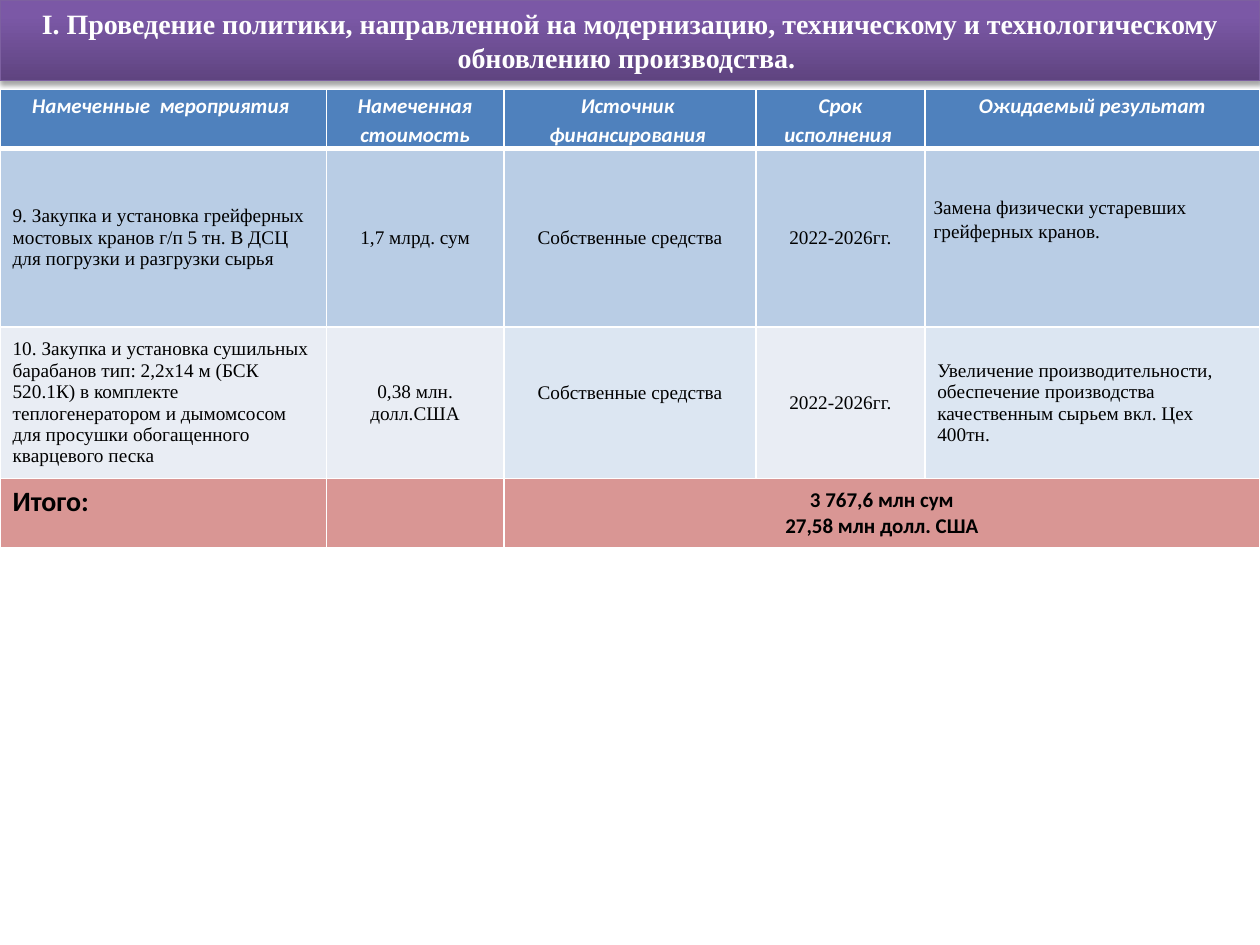
from copy import deepcopy
from dataclasses import dataclass

from lxml import etree
from pptx import Presentation
from pptx.dml.color import RGBColor
from pptx.enum.text import MSO_ANCHOR, MSO_AUTO_SIZE, PP_ALIGN
from pptx.oxml import parse_xml
from pptx.oxml.ns import nsdecls, qn
from pptx.util import Inches, Pt

LEFT, CENTER = PP_ALIGN.LEFT, PP_ALIGN.CENTER
TOP, MIDDLE = MSO_ANCHOR.TOP, MSO_ANCHOR.MIDDLE
FIXED_SIZE = MSO_AUTO_SIZE.NONE


@dataclass(frozen=True)
class Theme:
    serif: str = "Times New Roman"
    sans: str = "Calibri"
    white: str = "FFFFFF"
    black: str = "000000"
    banner_stops: tuple = ((0, "5F4480"), (0.8, "7B58A6"), (1, "7C57A8"))
    banner_line: str = "7D60A0"
    header: str = "4F81BD"
    first_row: str = "B9CDE5"
    second_row: str = "E9EDF4"
    second_row_accent: str = "DCE6F2"
    total: str = "D99694"
    large: int = 16
    medium: int = 12
    small: int = 11


theme = Theme()


def write(frame, lines, font, size, color, align=LEFT, bold=False, italic=False, spacing=1.0):
    for index, line in enumerate(lines):
        paragraph = frame.paragraphs[0] if index == 0 else frame.add_paragraph()
        paragraph.alignment = align
        paragraph.line_spacing = spacing
        run = paragraph.add_run()
        run.text = line
        run.font.name = font
        run.font.size = Pt(size)
        run.font.bold = bold
        run.font.italic = italic
        run.font.color.rgb = RGBColor.from_string(color)


def paint_cell(cell, fill, bottom_width=1):
    """Fill a cell and rule it in white on all four sides."""
    properties = cell._tc.get_or_add_tcPr()
    for side in ("lnL", "lnR", "lnT", "lnB"):
        width = bottom_width if side == "lnB" else 1
        line = etree.SubElement(properties, qn(f"a:{side}"), w=str(Pt(width)))
        solid = etree.SubElement(line, qn("a:solidFill"))
        etree.SubElement(solid, qn("a:srgbClr"), val=theme.white)
    cell.fill.solid()
    cell.fill.fore_color.rgb = RGBColor.from_string(fill)


prs = Presentation()
prs.slide_width, prs.slide_height = Inches(10), Inches(7.5)
slide = prs.slides.add_slide(prs.slide_layouts[5])

# Banner with the section heading
banner = slide.shapes.title
banner.left, banner.top = Inches(0), Inches(0)
banner.width, banner.height = Inches(10), Inches(0.64)
banner.fill.gradient()
banner.fill.gradient_angle = 90
stop_list = banner._element.spPr.find(".//" + qn("a:gsLst"))
stop_list.append(deepcopy(stop_list[-1]))
for stop, (position, color) in zip(banner.fill.gradient_stops, theme.banner_stops):
    stop.position = position
    stop.color.rgb = RGBColor.from_string(color)
banner.line.color.rgb = RGBColor.from_string(theme.banner_line)
banner.line.width = Pt(0.75)
banner._element.spPr.append(parse_xml(
    f'<a:effectLst {nsdecls("a")}><a:outerShdw blurRad="{Pt(3.1)}" dist="{Pt(1.8)}" '
    f'dir="5400000" rotWithShape="0"><a:srgbClr val="{theme.black}">'
    '<a:alpha val="35000"/></a:srgbClr></a:outerShdw></a:effectLst>'))
heading = banner.text_frame
heading.word_wrap = True
heading.auto_size = FIXED_SIZE
heading.vertical_anchor = MIDDLE
heading.margin_top = heading.margin_bottom = 0
write(heading, ["I. Проведение политики, направленной на модернизацию, техническому и "
                "технологическому обновлению производства. "],
      theme.serif, theme.large, theme.white, CENTER, bold=True)

# Table of measures
column_widths = (2.59, 1.41, 2, 1.34, 2.66)
row_heights = (0.46, 1.42, 1.2, 0.55)
plan = slide.shapes.add_table(len(row_heights), len(column_widths), Inches(0), Inches(0.71),
                              Inches(sum(column_widths)), Inches(sum(row_heights))).table
plan.horz_banding = False
for column, width in zip(plan.columns, column_widths):
    column.width = Inches(width)
for row, height in zip(plan.rows, row_heights):
    row.height = Inches(height)

headers = (
    ["Намеченные  мероприятия "],
    ["Намеченная", "стоимость"],
    ["Источник  финансирования "],
    ["Срок исполнения "],
    ["Ожидаемый результат"],
)
for column, lines in enumerate(headers):
    cell = plan.cell(0, column)
    paint_cell(cell, theme.header, bottom_width=3)
    cell.margin_left = cell.margin_right = Inches(0.07)
    cell.margin_top = cell.margin_bottom = 0
    write(cell.text_frame, lines, theme.sans, theme.medium, theme.white, CENTER,
          bold=True, italic=True, spacing=1.15)

measures = (
    ("9. Закупка и установка грейферных мостовых кранов г/п 5 тн. В ДСЦ для погрузки и "
     "разгрузки сырья",
     "1,7 млрд. сум", "Собственные средства", "2022-2026гг.",
     "Замена физически устаревших грейферных кранов."),
    ("10. Закупка и установка сушильных барабанов тип: 2,2х14 м (БСК 520.1К) в комплекте "
     "теплогенератором и дымомсосом для просушки обогащенного кварцевого песка",
     "0,38 млн. долл.США", "Собственные средства", "2022-2026гг.",
     "Увеличение производительности, обеспечение производства качественным сырьем вкл. "
     "Цех 400тн."),
)
measure_fills = (
    [theme.first_row] * 5,
    [theme.second_row, theme.second_row, theme.second_row_accent,
     theme.second_row, theme.second_row_accent],
)
for row, (texts, fills) in enumerate(zip(measures, measure_fills), start=1):
    for column, (text, fill) in enumerate(zip(texts, fills)):
        cell = plan.cell(row, column)
        paint_cell(cell, fill)
        cell.vertical_anchor = MIDDLE
        crane_result = (row, column) == (1, 4)
        write(cell.text_frame, [text], theme.serif, theme.small, theme.black,
              LEFT if column in (0, 4) else CENTER, spacing=1.15 if crane_result else 1.0)

crane_result_cell = plan.cell(1, 4)
crane_result_cell.vertical_anchor = TOP
crane_result_cell.margin_left = crane_result_cell.margin_right = Inches(0.07)
crane_result_cell.margin_top, crane_result_cell.margin_bottom = Inches(0.36), 0
plan.cell(2, 2).margin_bottom = Inches(0.21)

# Totals
for column in range(len(column_widths)):
    paint_cell(plan.cell(3, column), theme.total)
total_label, total_value = plan.cell(3, 0), plan.cell(3, 2)
total_value.merge(plan.cell(3, 4))
total_label.vertical_anchor = total_value.vertical_anchor = MIDDLE
total_label.margin_bottom = Inches(0.22)
write(total_label.text_frame, ["Итого:"], theme.sans, theme.large, theme.black, bold=True)
write(total_value.text_frame, ["3 767,6 млн сум", "27,58 млн долл. США"],
      theme.sans, theme.medium, theme.black, CENTER, bold=True)

prs.save("out.pptx")
